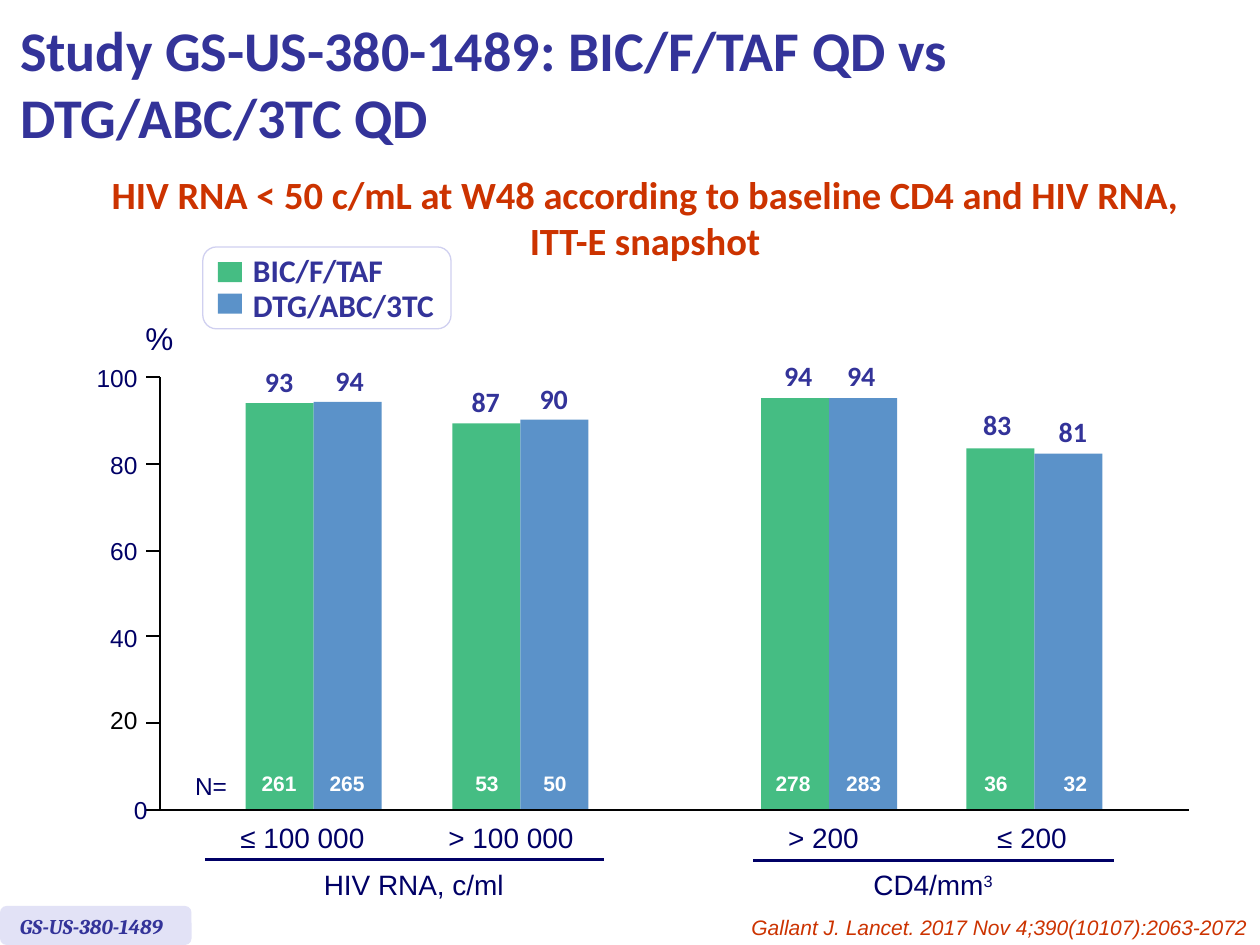
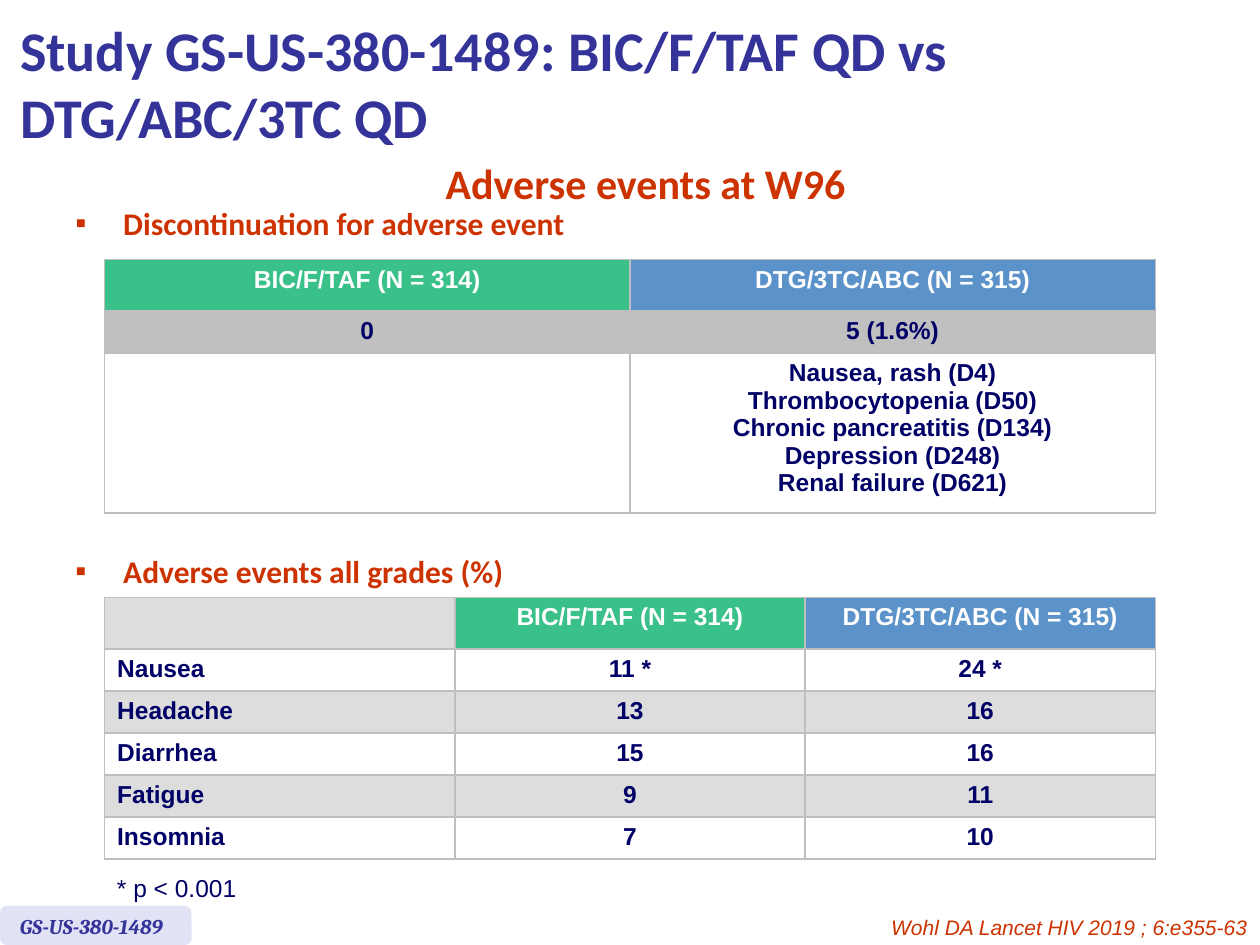
from lxml.etree import SubElement
from pptx import Presentation
from pptx.dml.color import RGBColor
from pptx.enum.shapes import MSO_CONNECTOR, MSO_SHAPE
from pptx.enum.text import MSO_ANCHOR, MSO_AUTO_SIZE, PP_ALIGN
from pptx.oxml import parse_xml
from pptx.oxml.ns import nsdecls, qn
from pptx.util import Pt

PX = 9144
COLORS = {
    "indigo": "333399", "navy": "000066", "red": "CC3300", "black": "000000",
    "white": "FFFFFF", "axis": "010101", "green": "45BD83", "blue": "5B92C9",
    "header green": "3AC18A", "border": "BFBFBF", "silver": "C0C0C0",
    "grey": "DDDDDD", "badge": "E2E2F6", "legend line": "D0D0F0",
}
RGB = {name: RGBColor.from_string(value) for name, value in COLORS.items()}
STYLES = {
    "title": ("Calibri", 32, "indigo", True, False),
    "subtitle": ("Calibri", 22, "red", True, False),
    "heading": ("Calibri", 24, "red", True, False),
    "bullet": ("Calibri", 18, "red", True, False),
    "legend": ("Calibri", 18, "indigo", True, False),
    "value": ("Calibri", 16, "indigo", True, False),
    "category": ("Arial", 16, "navy", False, False),
    "unit": ("Arial", 18, "navy", False, False),
    "small": ("Arial", 14, "navy", False, False),
    "small black": ("Arial", 14, "black", False, False),
    "count": ("Arial", 12, "white", True, False),
    "table header": ("Arial", 14, "white", True, False),
    "table body": ("Arial", 14, "navy", True, False),
    "badge": ("Cambria", 12, "indigo", True, True),
    "citation": ("Arial", 12, "red", False, True),
}
LEFT, CENTER, RIGHT = PP_ALIGN.LEFT, PP_ALIGN.CENTER, PP_ALIGN.RIGHT


def style_runs(paragraph, style, align):
    name, size, color, bold, italic = STYLES[style]
    paragraph.alignment = align
    for run in paragraph.runs:
        run.font.name = name
        run.font.size = Pt(size)
        run.font.color.rgb = RGB[color]
        run.font.bold = bold
        run.font.italic = italic


def add_text(slide, text, box, style, align=LEFT, anchor=MSO_ANCHOR.TOP, wrap=True):
    shape = slide.shapes.add_textbox(*[value * PX for value in box])
    text_frame = shape.text_frame
    text_frame.word_wrap = wrap
    text_frame.vertical_anchor = anchor
    text_frame.text = text
    style_runs(text_frame.paragraphs[0], style, align)
    return text_frame.paragraphs[0]


presentation = Presentation()
presentation.slide_width = 1000 * PX
presentation.slide_height = 750 * PX
title_only = presentation.slide_layouts[5]
citations = [
    "Gallant J. Lancet. 2017 Nov 4;390(10107):2063-2072",
    "Wohl DA Lancet HIV 2019 ; 6:e355-63",
]

for citation in citations:
    slide = presentation.slides.add_slide(title_only)
    title = slide.shapes.title
    title.left, title.top, title.width, title.height = 6 * PX, 5 * PX, 848 * PX, 121 * PX
    title.text_frame.text = "Study GS-US-380-1489: BIC/F/TAF QD vs DTG/ABC/3TC QD"
    title.text_frame.word_wrap = True
    title.text_frame.auto_size = MSO_AUTO_SIZE.NONE
    title.text_frame.vertical_anchor = MSO_ANCHOR.MIDDLE
    style_runs(title.text_frame.paragraphs[0], "title", LEFT)
    badge = slide.shapes.add_shape(
        MSO_SHAPE.ROUNDED_RECTANGLE, 0, 719 * PX, 152 * PX, 31 * PX)
    badge.shadow.inherit = False
    badge.fill.solid()
    badge.fill.fore_color.rgb = RGB["badge"]
    badge.line.fill.background()
    add_text(slide, "GS-US-380-1489", (6, 720, 141, 30), "badge")
    add_text(slide, citation, (264, 721, 736, 30), "citation", RIGHT)

response_slide, events_slide = presentation.slides

add_text(response_slide,
         "HIV RNA < 50 c/mL at W48 according to baseline CD4 and HIV RNA, ITT-E snapshot",
         (67, 131, 890, 84), "subtitle", CENTER)

BASELINE, BAR_WIDTH = 643, 54
bars = [
    (195, 320, "green", "93", (200, 284), "261", 183),
    (249, 319, "blue", "94", (256, 283), "265", 237),
    (359, 336, "green", "87", (364, 300), "53", 348),
    (413, 333, "blue", "90", (418, 298), "50", 402),
    (604, 316, "green", "94", (612, 279), "278", 591),
    (658, 316, "blue", "94", (662, 279), "283", 647),
    (767, 356, "green", "83", (770, 318), "36", 752),
    (821, 360, "blue", "81", (830, 324), "32", 815),
]
blocks = [(MSO_SHAPE.RECTANGLE, left, top, BAR_WIDTH, BASELINE - top, color)
          for left, top, color, *labels in bars]
blocks += [
    (MSO_SHAPE.ROUNDED_RECTANGLE, 161, 196, 197, 65, "white"),
    (MSO_SHAPE.RECTANGLE, 173, 208, 19, 16, "green"),
    (MSO_SHAPE.RECTANGLE, 173, 233, 19, 16, "blue"),
]
for kind, left, top, width, height, color in blocks:
    shape = response_slide.shapes.add_shape(
        kind, left * PX, top * PX, width * PX, height * PX)
    shape.shadow.inherit = False
    shape.fill.solid()
    shape.fill.fore_color.rgb = RGB[color]
    if kind == MSO_SHAPE.ROUNDED_RECTANGLE:
        shape.line.color.rgb = RGB["legend line"]
        shape.line.width = Pt(0.75)
    else:
        shape.line.fill.background()

for left, top, color, value, value_place, count, count_left in bars:
    add_text(response_slide, value, (*value_place, 43, 37), "value", CENTER,
             MSO_ANCHOR.MIDDLE, False)
    add_text(response_slide, count, (count_left, 607, 77, 30), "count", CENTER)

lines = [
    (127, BASELINE, 127, 299, "axis", 1.13),
    (127, BASELINE, 944, BASELINE, "axis", 1.13),
    (163, 682, 479, 682, "navy", 1.5),
    (598, 683, 884, 683, "navy", 1.5),
]
for start_x, start_y, end_x, end_y, color, width in lines:
    connector = response_slide.shapes.add_connector(
        MSO_CONNECTOR.STRAIGHT, start_x * PX, start_y * PX, end_x * PX, end_y * PX)
    connector.line.color.rgb = RGB[color]
    connector.line.width = Pt(width)
    SubElement(connector._element.spPr, qn("a:effectLst"))

builder = response_slide.shapes.build_freeform(116, BASELINE, scale=PX)
builder.add_line_segments([(127, BASELINE)], close=False)
for step in range(1, 6):
    tick_y = BASELINE - round(step * 68.8)
    builder.move_to(116, tick_y)
    builder.add_line_segments([(127, tick_y)], close=False)
ticks = builder.convert_to_shape()
ticks.shadow.inherit = False
ticks.fill.background()
ticks.line.color.rgb = RGB["axis"]
ticks.line.width = Pt(1.13)

tick_labels = [("0", 43, 626), ("20", 35, 554), ("40", 35, 489),
               ("60", 35, 420), ("80", 35, 352), ("100", 35, 283)]
for text, left, top in tick_labels:
    style = "small black" if text == "20" else "small"
    add_text(response_slide, text, (left, top, 84, 34), style, RIGHT, MSO_ANCHOR.MIDDLE)

category_labels = [
    ("≤ 100 000", 180, 646, 120), ("> 100 000", 345, 646, 121),
    ("> 200", 615, 646, 77), ("≤ 200", 781, 646, 76),
    ("HIV RNA, c/ml", 246, 684, 165), ("CD4/mm", 682, 684, 117),
]
for text, left, top, width in category_labels:
    paragraph = add_text(response_slide, text, (left, top, width, 37), "category",
                         CENTER, wrap=False)
    if text == "CD4/mm":
        exponent = paragraph.add_run()
        exponent.text = "3"
        style_runs(paragraph, "category", CENTER)
        exponent._r.get_or_add_rPr().set("baseline", "30000")

add_text(response_slide, "%", (105, 248, 43, 40), "unit", CENTER, wrap=False)
add_text(response_slide, "N=", (145, 607, 50, 34), "small")
add_text(response_slide, "BIC/F/TAF", (191, 194, 180, 40), "legend")
add_text(response_slide, "DTG/ABC/3TC", (191, 222, 180, 40), "legend")

add_text(events_slide, "Adverse events at W96", (341, 120, 343, 50), "heading",
         CENTER, wrap=False)
for text, top in [("Discontinuation for adverse event", 157),
                  ("Adverse events all grades (%)", 433)]:
    paragraph = add_text(events_slide, text, (50, top, 950, 38), "bullet")
    properties = paragraph._p.get_or_add_pPr()
    properties.set("marL", str(38 * PX))
    properties.set("indent", str(-38 * PX))
    bullet_color = SubElement(properties, qn("a:buClr"))
    SubElement(bullet_color, qn("a:srgbClr"), val=COLORS["red"])
    SubElement(properties, qn("a:buFont"), typeface="Arial")
    SubElement(properties, qn("a:buChar"), char="▪")

arms = ["BIC/F/TAF (N = 314)", "DTG/3TC/ABC (N = 315)"]
discontinuations = "\n".join([
    "Nausea, rash (D4)", "Thrombocytopenia (D50)", "Chronic pancreatitis (D134)",
    "Depression (D248)", "Renal failure (D621)"])
tables = [
    (206, [41, 32, 119], ["silver", "white"],
     [arms, ["0", "5 (1.6%)"], ["", discontinuations]]),
    (474, [41] + [32] * 5, ["white", "grey"],
     [["", *arms], ["Nausea", "11 *", "24 *"], ["Headache", "13", "16"],
      ["Diarrhea", "15", "16"], ["Fatigue", "9", "11"], ["Insomnia", "7", "10"]]),
]
for top, heights, bands, rows in tables:
    columns = len(rows[0])
    header_fills = ["grey", "header green", "blue"][-columns:]
    table = events_slide.shapes.add_table(
        len(rows), columns, 83 * PX, top * PX, 834 * PX, sum(heights) * PX).table
    table.first_row = False
    table.horz_banding = False
    for row_index, row in enumerate(rows):
        table.rows[row_index].height = heights[row_index] * PX
        for column_index, text in enumerate(row):
            cell = table.cell(row_index, column_index)
            cell.text = text
            style = "table body" if row_index else "table header"
            label = row_index > 0 and column_index == 0 and columns == 3
            for paragraph in cell.text_frame.paragraphs:
                style_runs(paragraph, style, LEFT if label else CENTER)
            properties = cell._tc.get_or_add_tcPr()
            for side in ("lnL", "lnR", "lnT", "lnB"):
                properties.append(parse_xml(
                    f'<a:{side} {nsdecls("a")} w="12700"><a:solidFill>'
                    f'<a:srgbClr val="{COLORS["border"]}"/></a:solidFill></a:{side}>'))
            cell.fill.solid()
            fill = bands[(row_index - 1) % 2] if row_index else header_fills[column_index]
            cell.fill.fore_color.rgb = RGB[fill]

add_text(events_slide, "* p < 0.001", (83, 688, 150, 34), "small")

presentation.save("out.pptx")
